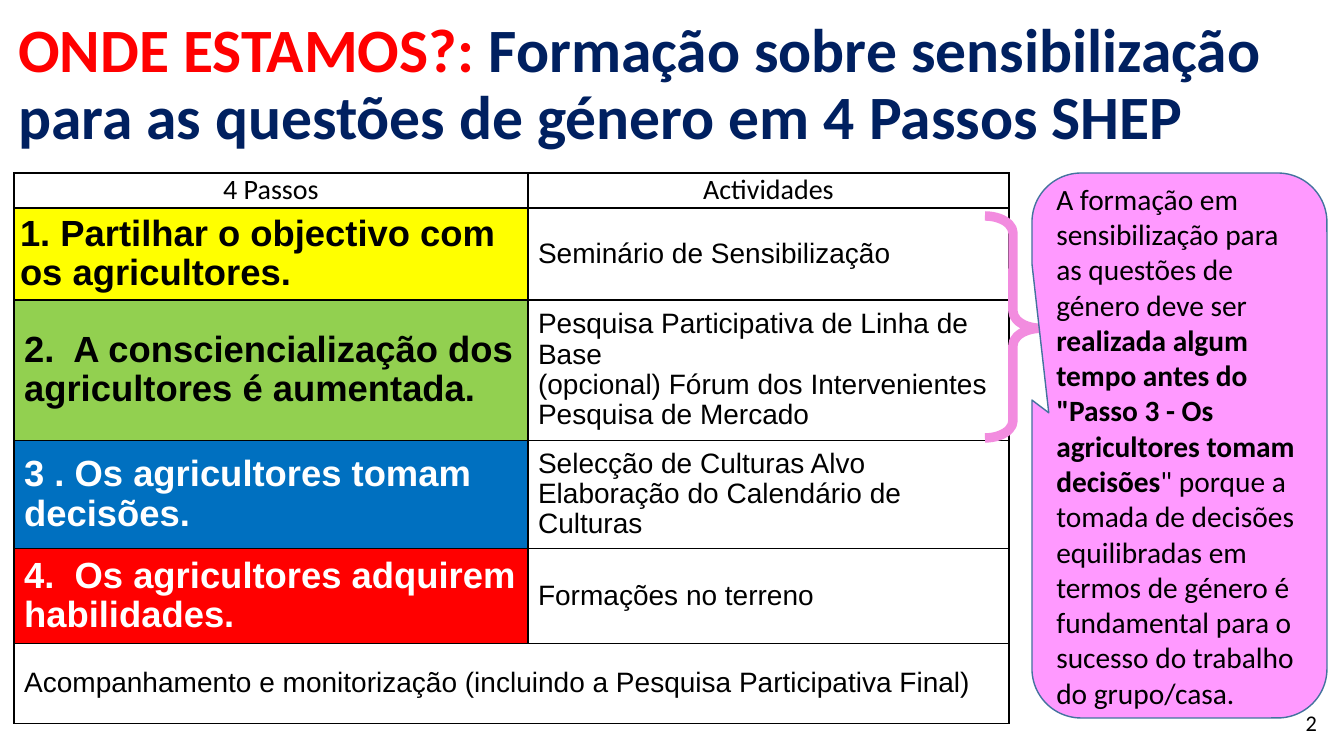
from dataclasses import dataclass

from lxml.etree import SubElement
from pptx import Presentation
from pptx.dml.color import RGBColor
from pptx.enum.shapes import MSO_SHAPE
from pptx.enum.text import MSO_ANCHOR, MSO_AUTO_SIZE, PP_ALIGN
from pptx.oxml.ns import qn
from pptx.util import Emu, Pt

BRACE = MSO_SHAPE.RIGHT_BRACE
CALLOUT = MSO_SHAPE.ROUNDED_RECTANGULAR_CALLOUT
MIDDLE, TOP = MSO_ANCHOR.MIDDLE, MSO_ANCHOR.TOP
LEFT, CENTER, RIGHT = PP_ALIGN.LEFT, PP_ALIGN.CENTER, PP_ALIGN.RIGHT
NO_FIT = MSO_AUTO_SIZE.NONE

SCALE = 914400 / 100.8
BLACK, WHITE, NAVY, RED = "000000", "FFFFFF", "002060", "FF0000"
COLS = (514, 481)
ROWS = (35, 92, 136, 103, 92, 80)


@dataclass
class Step:
    title: str
    tasks: list[str]
    fill: str
    color: str


STEPS = [
    Step("1. Partilhar o objectivo com os agricultores.",
         ["Seminário de Sensibilização"], "FFFF00", BLACK),
    Step("2.  A consciencialização dos agricultores é aumentada.",
         ["Pesquisa Participativa de Linha de Base",
          "(opcional) Fórum dos Intervenientes",
          "Pesquisa de Mercado"], "92D050", BLACK),
    Step("3 . Os agricultores tomam decisões.",
         ["Selecção de Culturas Alvo",
          "Elaboração do Calendário de Culturas"], "0070C0", WHITE),
    Step("4.  Os agricultores adquirem habilidades.",
         ["Formações no terreno"], RED, WHITE),
]
LAST = "Acompanhamento e monitorização (incluindo a Pesquisa Participativa Final)"
TITLE = [("ONDE ESTAMOS?: ", RED),
         ("Formação sobre sensibilização para as questões de género "
          "em 4 Passos SHEP", NAVY)]
NOTE = [("A formação em sensibilização para as questões de género deve ser ", False),
        ("realizada algum tempo antes do \"Passo 3 - Os agricultores tomam decisões", True),
        ("\" porque a tomada de decisões equilibradas em termos de género é "
         "fundamental para o sucesso do trabalho do grupo/casa.", False)]


def px(*sizes: int) -> list[Emu]:
    return [Emu(round(size * SCALE)) for size in sizes]


def rgb(color: str) -> RGBColor:
    return RGBColor.from_string(color)


def style(para, size: int, face: str, color: str = BLACK,
          bold: bool = False, align=LEFT) -> None:
    para.alignment = align
    font = para.font
    font.size, font.name, font.bold = Pt(size), face, bold
    font.color.rgb = rgb(color)


def border(cell) -> None:
    """Draw a thin black line on all four sides, ahead of the fill."""
    props = cell._tc.get_or_add_tcPr()
    for spot, side in enumerate(("a:lnL", "a:lnR", "a:lnT", "a:lnB")):
        line = SubElement(props, qn(side), w=str(Pt(1)))
        fill = SubElement(line, qn("a:solidFill"))
        SubElement(fill, qn("a:srgbClr"), val=BLACK)
        props.insert(spot, line)


def write(cell, lines: list[str], size: int = 20, face: str = "Arial",
          color: str = BLACK, bold: bool = False, align=LEFT,
          fill: str = "", tight: bool = False) -> None:
    cell.text = "\n".join(lines)
    cell.vertical_anchor = MIDDLE
    if tight:
        cell.margin_left, cell.margin_right = px(6, 6)
        cell.margin_top = cell.margin_bottom = 0
    for para in cell.text_frame.paragraphs:
        style(para, size, face, color, bold, align)
        if face == "Arial":
            para.line_spacing = 0.97
    if fill:
        cell.fill.solid()
        cell.fill.fore_color.rgb = rgb(fill)
    else:
        cell.fill.background()
    border(cell)


def add_title(slide) -> None:
    title = slide.shapes.title
    title.left, title.top, title.width, title.height = px(8, 13, 1328, 146)
    frame = title.text_frame
    frame.auto_size, frame.word_wrap = NO_FIT, True
    frame.vertical_anchor = MIDDLE
    para = frame.paragraphs[0]
    style(para, 44, "Calibri", NAVY, True)
    para.line_spacing = 0.9
    for text, color in TITLE:
        run = para.add_run()
        run.text = text
        run.font.color.rgb = rgb(color)


def add_steps(slide) -> None:
    table = slide.shapes.add_table(
        len(ROWS), len(COLS), *px(14, 173, sum(COLS), sum(ROWS))).table
    table.first_row = table.horz_banding = False
    for col, width in zip(table.columns, px(*COLS)):
        col.width = width
    for row, height in zip(table.rows, px(*ROWS)):
        row.height = height
    for col, head in enumerate(("4 Passos", "Actividades")):
        cell = table.cell(0, col)
        write(cell, [head], face="Calibri", align=CENTER, tight=True)
        cell.vertical_anchor = TOP
    for row, step in enumerate(STEPS, 1):
        write(table.cell(row, 0), [step.title], 26, color=step.color,
              bold=True, fill=step.fill, tight=row == 1)
        write(table.cell(row, 1), step.tasks)
    foot, end = table.cell(len(ROWS) - 1, 0), table.cell(len(ROWS) - 1, 1)
    foot.merge(end)
    write(foot, [LAST])
    border(end)


def add_shape(slide, kind, box: tuple[int, ...], bends: tuple[float, ...],
              line: str, width: float):
    shape = slide.shapes.add_shape(kind, *px(*box))
    shape.shadow.inherit = False
    for spot, bend in enumerate(bends):
        shape.adjustments[spot] = bend
    shape.fill.background()
    shape.line.color.rgb = rgb(line)
    shape.line.width = Pt(width)
    return shape


def add_note(slide) -> None:
    note = add_shape(slide, CALLOUT, (1032, 173, 295, 545),
                     (-0.443, -0.06, 0.167), "43739E", 1)
    note.fill.solid()
    note.fill.fore_color.rgb = rgb("FF99FF")
    frame = note.text_frame
    frame.word_wrap, frame.vertical_anchor = True, MIDDLE
    para = frame.paragraphs[0]
    style(para, 21, "Calibri")
    for text, bold in NOTE:
        run = para.add_run()
        run.text, run.font.bold = text, bold


def add_page(slide) -> None:
    frame = slide.shapes.add_textbox(*px(1025, 703, 302, 40)).text_frame
    frame.word_wrap, frame.vertical_anchor = True, MIDDLE
    frame.text = "2"
    style(frame.paragraphs[0], 16, "Calibri", align=RIGHT)


def main() -> None:
    deck = Presentation()
    deck.slide_width, deck.slide_height = px(1344, 756)
    slide = deck.slides.add_slide(deck.slide_layouts[5])
    add_title(slide)
    add_page(slide)
    add_steps(slide)
    add_shape(slide, BRACE, (985, 216, 56, 222), (0.305, 0.506), "F28CDF", 6.75)
    add_note(slide)
    deck.save("out.pptx")


if __name__ == "__main__":
    main()
